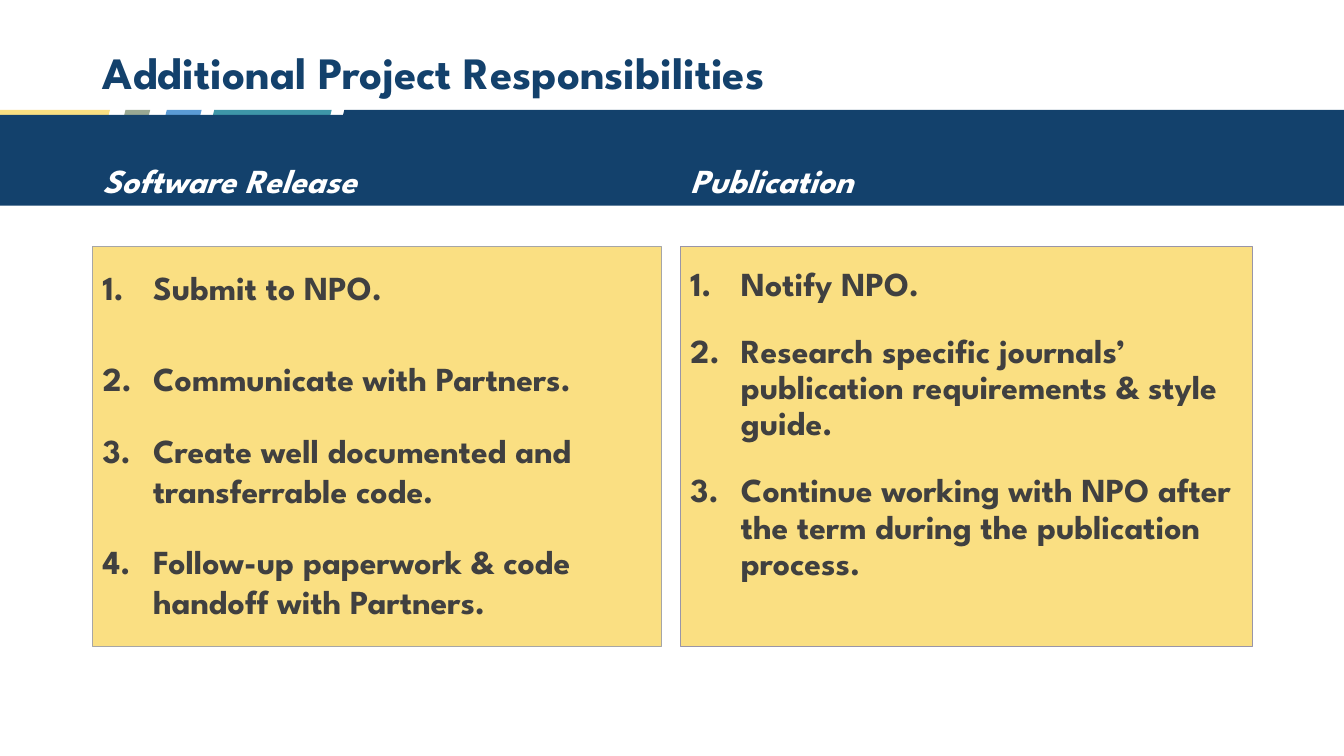
from pptx import Presentation
from pptx.dml.color import RGBColor
from pptx.enum.shapes import MSO_SHAPE
from pptx.enum.text import MSO_ANCHOR, PP_ALIGN
from pptx.oxml.xmlchemy import OxmlElement
from pptx.util import Inches, Pt

NAVY, YELLOW, WHITE, GRAY = "13416C", "FADF82", "FFFFFF", "404040"


def add_box(shape_type, x, y, w, h, fill, line=None):
    sp = s.shapes.add_shape(shape_type, Inches(x), Inches(y), Inches(w), Inches(h))
    sp.shadow.inherit = False
    sp.fill.solid()
    sp.fill.fore_color.rgb = RGBColor.from_string(fill)
    if line:
        sp.line.color.rgb = RGBColor.from_string(line)
        sp.line.width = Pt(0.75)
    else:
        sp.line.fill.background()
    return sp


def format_text(p, size, color, spacing, italic=False):
    p.alignment = PP_ALIGN.LEFT
    p.line_spacing = spacing
    for r in p.runs:
        r.font.name = "League Spartan"
        r.font.size = Pt(size)
        r.font.bold = True
        r.font.italic = italic
        r.font.color.rgb = RGBColor.from_string(color)


prs = Presentation()
prs.slide_width, prs.slide_height = Inches(13.33), Inches(7.5)
s = prs.slides.add_slide(prs.slide_layouts[5])

stripes = [
    (-0.03, 1.12, YELLOW),
    (1.23, 0.26, "99A893"),
    (1.64, 0.36, "5B9BD5"),
    (2.11, 1.18, "3E96A8"),
    (3.4, 9.98, NAVY),
]
for x, w, color in stripes:
    add_box(MSO_SHAPE.PARALLELOGRAM, x, 1.09, w, 0.06, color)
add_box(MSO_SHAPE.RECTANGLE, 0, 1.14, 13.33, 0.9, NAVY)

title = s.shapes.title
title.left, title.top = Inches(0.92), Inches(0.4)
title.width, title.height = Inches(11.5), Inches(0.69)
title.text_frame.text = "Additional Project Responsibilities"
title.text_frame.vertical_anchor = MSO_ANCHOR.MIDDLE
format_text(title.text_frame.paragraphs[0], 32, NAVY, 0.9)

columns = [
    (0.92, 5.64, "A6A6A6", "Software Release", [
        ("Submit to NPO.", 1.0),
        ("Communicate with Partners.", 1.5),
        ("Create well documented and transferrable code.", 1.0),
        ("Follow-up paperwork & code handoff with Partners.", 1.0),
    ]),
    (6.75, 5.67, "9995A8", "Publication", [
        ("Notify NPO.", 0.9),
        ("Research specific journals’ publication requirements & style guide.", 0.9),
        ("Continue working with NPO after the term during the publication process.", 0.9),
    ]),
]
for x, w, line, heading, steps in columns:
    tb = s.shapes.add_textbox(Inches(x), Inches(1.14), Inches(w), Inches(0.9))
    tf = tb.text_frame
    tf.word_wrap = True
    tf.vertical_anchor = MSO_ANCHOR.BOTTOM
    tf.text = heading
    format_text(tf.paragraphs[0], 24, WHITE, 0.9, italic=True)

    tf = add_box(MSO_SHAPE.RECTANGLE, x, 2.45, w, 3.96, YELLOW, line).text_frame
    tf.word_wrap = True
    tf.vertical_anchor = MSO_ANCHOR.TOP
    tf.margin_top = Inches(0.2)
    tf.text = "\n".join(step for step, spacing in steps)
    for i, (p, (step, spacing)) in enumerate(zip(tf.paragraphs, steps)):
        pPr = p._p.get_or_add_pPr()
        pPr.set("marL", str(Inches(0.5)))
        pPr.set("indent", str(-Inches(0.5)))
        number = OxmlElement("a:buAutoNum")
        number.set("type", "arabicPeriod")
        pPr.append(number)
        format_text(p, 24, GRAY, spacing)
        p.space_before = Pt(10 if i else 0)
        p.space_after = Pt(12 if i < len(steps) - 1 else 0)

prs.save("out.pptx")
